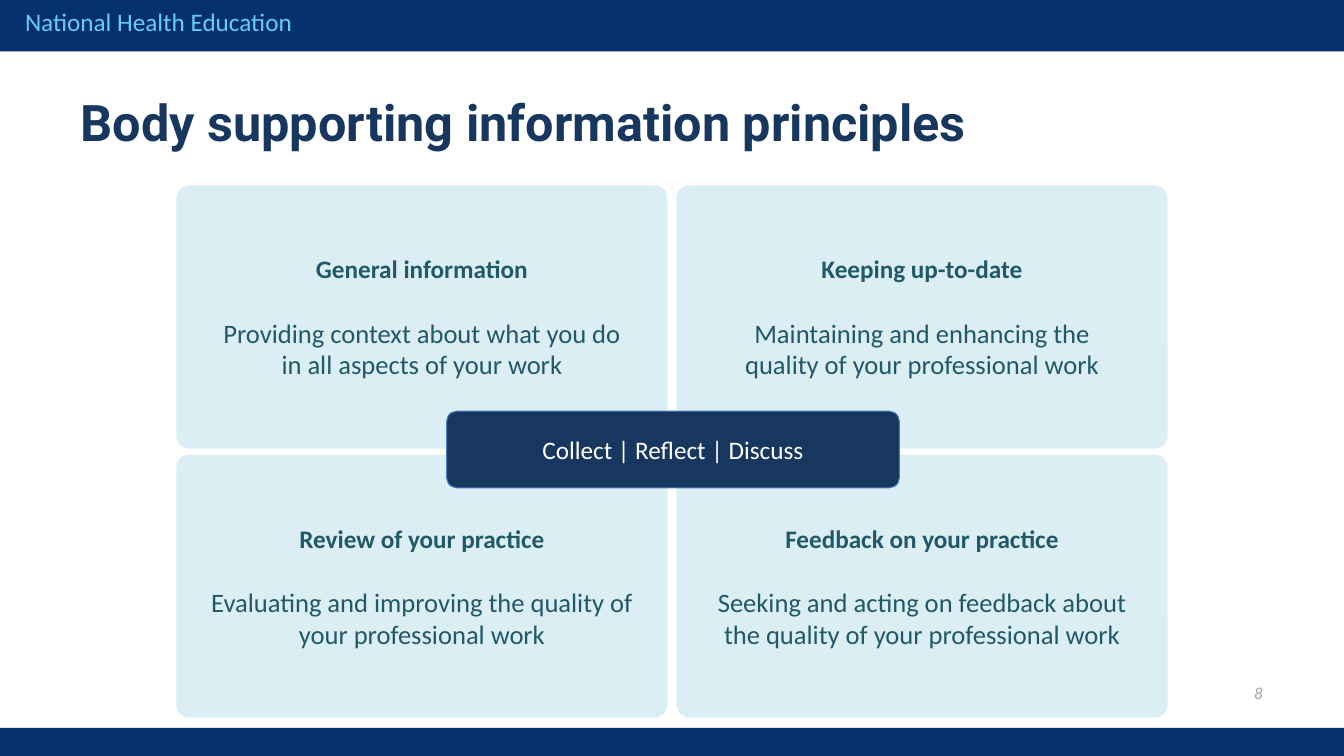
from pptx import Presentation
from pptx.dml.color import RGBColor
from pptx.enum.shapes import MSO_SHAPE
from pptx.enum.text import MSO_ANCHOR, PP_ALIGN
from pptx.util import Inches, Pt

NAVY = "04306C"
DEEP_BLUE = "17375E"
PALE_BLUE = "DBEEF4"
TEAL = "215968"

PRINCIPLES = [
    ("General information",
     ["Providing context about what you do", "in all aspects of your work"]),
    ("Keeping up-to-date",
     ["Maintaining and enhancing the", "quality of your professional work"]),
    ("Review of your practice",
     ["Evaluating and improving the quality of your professional work"]),
    ("Feedback on your practice",
     ["Seeking and acting on feedback about", "the quality of your professional work"]),
]


def colour(value):
    return RGBColor.from_string(value)


def write(para, text, size=18, color=TEAL, font="Calibri", bold=False,
          italic=False, align=PP_ALIGN.CENTER, before=0):
    para.alignment = align
    para.space_before = Pt(before)
    span = para.add_run()
    span.text = text
    span.font.name = font
    span.font.size = Pt(size)
    span.font.bold = bold
    span.font.italic = italic
    span.font.color.rgb = colour(color)


def add_label(page, left, top, width, height, text, **style):
    box = page.shapes.add_textbox(Inches(left), Inches(top), Inches(width), Inches(height))
    box.text_frame.word_wrap = True
    write(box.text_frame.paragraphs[0], text, **style)


def add_block(page, kind, left, top, width, height, fill, line=None):
    block = page.shapes.add_shape(
        kind, Inches(left), Inches(top), Inches(width), Inches(height))
    block.shadow.inherit = False
    block.fill.solid()
    block.fill.fore_color.rgb = colour(fill)
    if line:
        block.line.color.rgb = colour(line)
        block.line.width = Pt(0.75)
    else:
        block.line.fill.background()
    return block


def add_card(page, left, top, width, height, fill, radius, line=None):
    card = add_block(page, MSO_SHAPE.ROUNDED_RECTANGLE, left, top, width, height, fill, line)
    card.adjustments[0] = radius / min(width, height)
    frame = card.text_frame
    frame.word_wrap = True
    frame.vertical_anchor = MSO_ANCHOR.MIDDLE
    frame.margin_left = frame.margin_right = Inches(0.13)
    frame.margin_top = frame.margin_bottom = Inches(0.07)
    return frame


def add_principle(page, left, top, heading, lines):
    frame = add_card(page, left, top, 4.87, 2.61, PALE_BLUE, 0.125)
    write(frame.paragraphs[0], heading, bold=True)
    for index, line in enumerate(lines):
        write(frame.add_paragraph(), line, size=19, before=0 if index else 23.2)


def main():
    deck = Presentation()
    deck.slide_width = Inches(13.33)
    deck.slide_height = Inches(7.5)
    page = deck.slides.add_slide(deck.slide_layouts[6])

    for top, height in ((0, 0.51), (7.22, 0.28)):
        add_block(page, MSO_SHAPE.RECTANGLE, 0, top, 13.33, height, NAVY)
    add_label(page, 0.15, 0.01, 5.66, 0.4, "National Health Education",
              color="66CCFF", align=PP_ALIGN.LEFT)
    add_label(page, 12.16, 6.72, 0.64, 0.3, "8", size=12, color="A6A6A6", italic=True)
    add_label(page, 0.7, 0.86, 11.94, 0.76, "Body supporting information principles",
              size=36, color=DEEP_BLUE, font="Roboto", bold=True, align=PP_ALIGN.LEFT)

    for index, (heading, lines) in enumerate(PRINCIPLES):
        row, column = divmod(index, 2)
        add_principle(page, 1.75 + column * 4.96, 1.84 + row * 2.67, heading, lines)

    hub = add_card(page, 4.43, 4.08, 4.49, 0.76, DEEP_BLUE, 0.1, line="4B7EBC")
    write(hub.paragraphs[0], "Collect | Reflect | Discuss", color="FFFFFF")

    deck.save("out.pptx")


if __name__ == "__main__":
    main()
